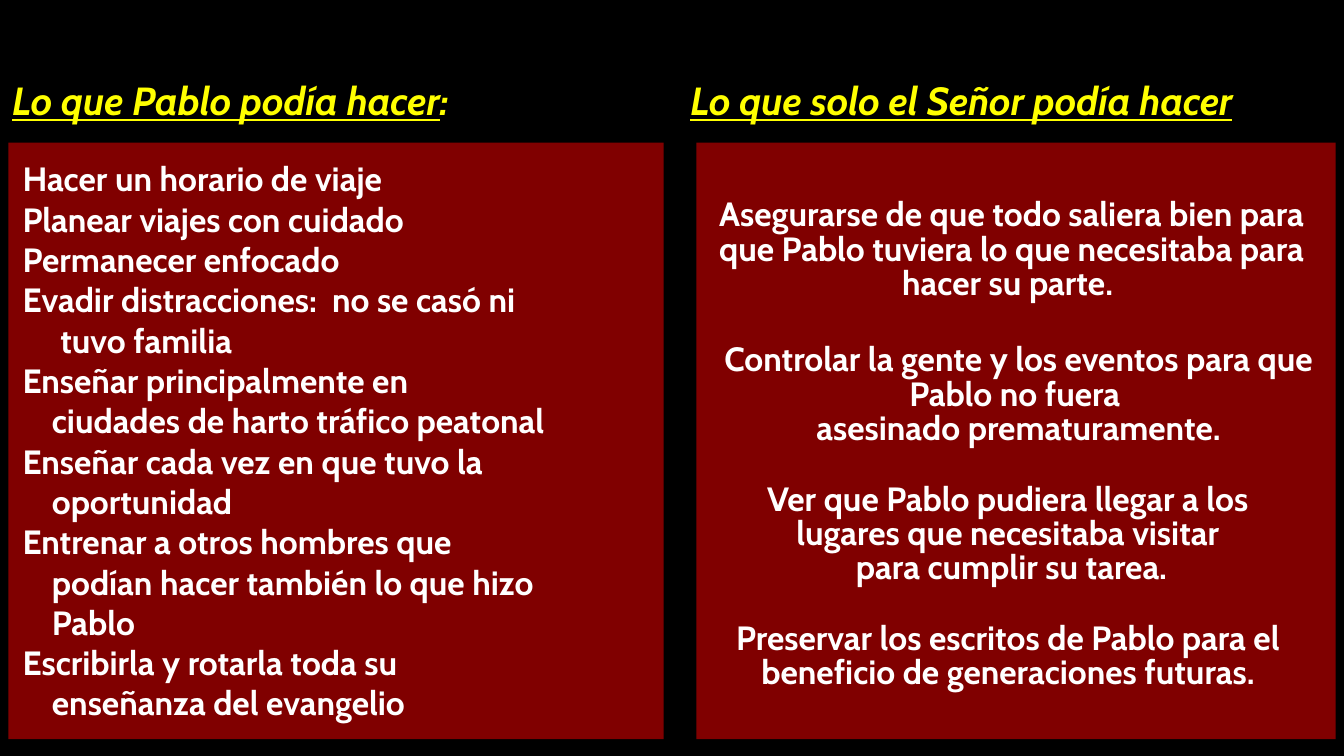
from dataclasses import dataclass

from pptx import Presentation
from pptx.dml.color import RGBColor
from pptx.enum.shapes import MSO_SHAPE
from pptx.enum.text import MSO_AUTO_SIZE, PP_ALIGN as Align
from pptx.util import Pt


@dataclass(frozen=True)
class Theme:
    font: str = "Cabin"
    background: RGBColor = RGBColor(0, 0, 0)
    panel: RGBColor = RGBColor(0x80, 0, 0)
    heading: RGBColor = RGBColor(0xFF, 0xFF, 0)
    body: RGBColor = RGBColor(0xFF, 0xFF, 0xFF)
    heading_size: int = 28
    body_size: int = 24


theme = Theme()

presentation = Presentation()
presentation.slide_width = Pt(960)
presentation.slide_height = Pt(540)
slide = presentation.slides.add_slide(presentation.slide_layouts[6])
slide.background.fill.solid()
slide.background.fill.fore_color.rgb = theme.background


def add_text(lines, box, size=theme.body_size, color=theme.body, align=Align.LEFT,
             spacing=None, heading=False, tail=""):
    frame = slide.shapes.add_textbox(*map(Pt, box)).text_frame
    frame.word_wrap = True
    frame.auto_size = MSO_AUTO_SIZE.SHAPE_TO_FIT_TEXT
    for index, (text, indent) in enumerate(lines):
        paragraph = frame.add_paragraph() if index else frame.paragraphs[0]
        paragraph.alignment = align
        paragraph.line_spacing = spacing
        if indent:
            paragraph._p.get_or_add_pPr().set("marL", str(Pt(indent)))
        for part, underlined in ((text, heading), (tail, False)):
            if part:
                run = paragraph.add_run()
                run.text = part
                run.font.name = theme.font
                run.font.size = Pt(size)
                run.font.bold = True
                run.font.italic = heading
                run.font.underline = underlined
                run.font.color.rgb = color


headings = [
    ("Lo que Pablo podía hacer", ":", 1.5, 419),
    ("Lo que solo el Señor podía hacer", "", 486, 473),
]
for text, tail, left, width in headings:
    add_text([(text, 0)], (left, 51, width, 41), size=theme.heading_size,
             color=theme.heading, heading=True, tail=tail)

for left, width in ((6, 468), (497.5, 456.5)):
    panel = slide.shapes.add_shape(MSO_SHAPE.RECTANGLE, Pt(left), Pt(102), Pt(width), Pt(426))
    panel.shadow.inherit = False
    panel.fill.solid()
    panel.fill.fore_color.rgb = theme.panel
    panel.line.fill.background()

pablo_tasks = [
    ("Hacer un horario de viaje", 0),
    ("Planear viajes con cuidado", 0),
    ("Permanecer enfocado", 0),
    ("Evadir distracciones:  no se casó ni", 0),
    ("tuvo familia", 27),
    ("Enseñar principalmente en", 0),
    ("ciudades de harto tráfico peatonal", 21),
    ("Enseñar cada vez en que tuvo la", 0),
    ("oportunidad", 21),
    ("Entrenar a otros hombres que", 0),
    ("podían hacer también lo que hizo", 21),
    ("Pablo", 21),
    ("Escribirla y rotarla toda su", 0),
    ("enseñanza del evangelio", 21),
]
add_text(pablo_tasks, (9, 109.5, 462, 415))

lord_tasks = [
    (["Asegurarse de que todo saliera bien para que Pablo tuviera lo que necesitaba "
      "para hacer su parte. "], 502, 139, 441),
    (["Controlar la gente y los eventos para que Pablo no fuera ",
      "asesinado prematuramente."], 502.5, 242.5, 450),
    (["Ver que Pablo pudiera llegar a los ", "lugares que necesitaba visitar ",
      "para cumplir su tarea."], 497.5, 342, 450),
    (["Preservar los escritos de Pablo para el beneficio de generaciones futuras."],
     499.5, 441.5, 441),
]
for lines, left, top, width in lord_tasks:
    add_text([(line, 0) for line in lines], (left, top, width, 81),
             align=Align.CENTER, spacing=0.85)

presentation.save("out.pptx")
